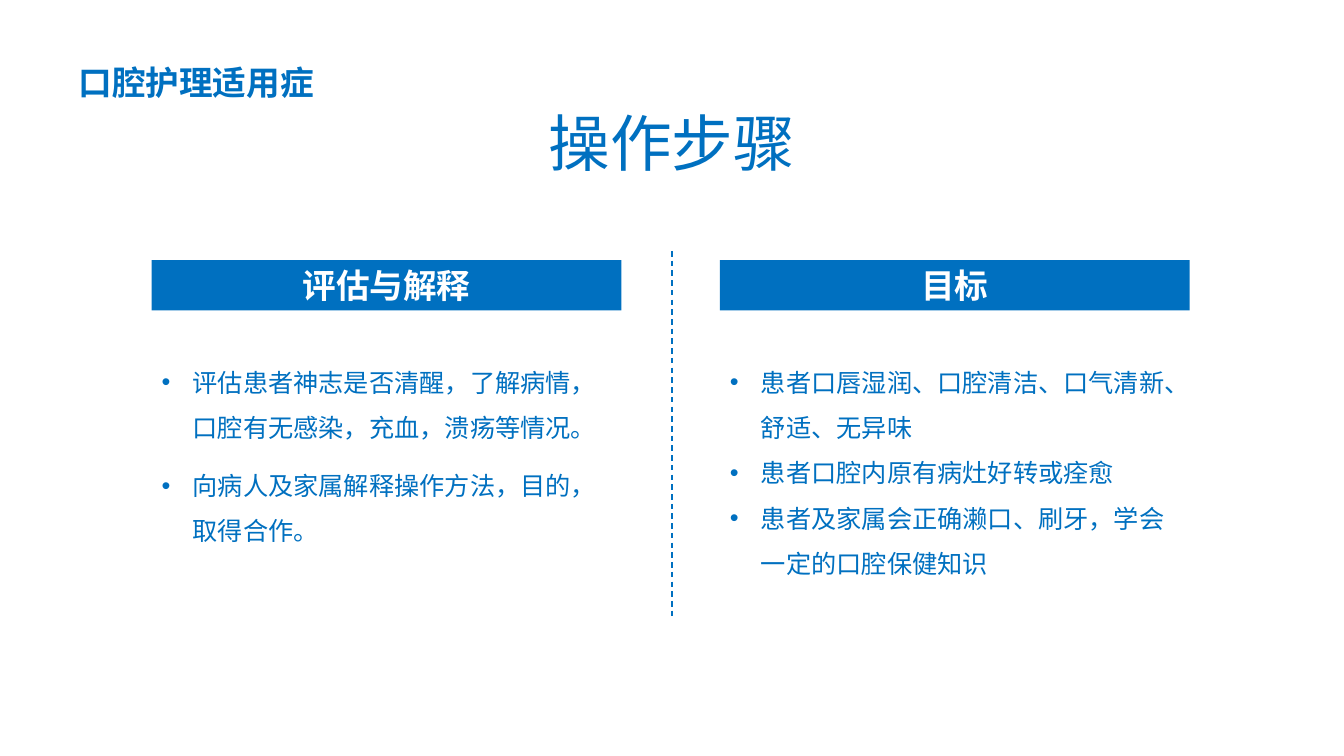
from dataclasses import dataclass

from lxml.etree import SubElement
from pptx import Presentation
from pptx.dml.color import RGBColor
from pptx.enum.dml import MSO_LINE
from pptx.enum.shapes import MSO_CONNECTOR as Connector, MSO_SHAPE as Shape
from pptx.enum.text import MSO_ANCHOR as Anchor, MSO_AUTO_SIZE as AutoSize, PP_ALIGN as Align
from pptx.oxml.ns import qn
from pptx.util import Inches, Pt

BLUE = RGBColor(0x00, 0x70, 0xC0)
WHITE = RGBColor(0xFF, 0xFF, 0xFF)
LATIN_FONT = "Roboto"
CHINESE_FONT = "Noto Sans CJK SC"
SLIDE_WIDTH = Inches(13.33)
SLIDE_HEIGHT = Inches(7.5)
PANEL_WIDTH = 34.95
BAR_TOP, BAR_HEIGHT = 34.4, 6.67
LIST_TOP = 45.87
BULLET_INDENT = Inches(0.31)


@dataclass(frozen=True)
class Panel:
    left: float
    heading: str
    points: tuple[str, ...]
    list_height: float
    point_gap: int


PANELS = (
    Panel(11.28, "评估与解释", (
        "评估患者神志是否清醒，了解病情，口腔有无感染，充血，溃疡等情况。",
        "向病人及家属解释操作方法，目的，取得合作。",
    ), 35.73, 9),
    Panel(53.56, "目标", (
        "患者口唇湿润、口腔清洁、口气清新、舒适、无异味",
        "患者口腔内原有病灶好转或痊愈",
        "患者及家属会正确濑口、刷牙，学会一定的口腔保健知识",
    ), 31.6, 0),
)


def across(percent: float) -> int:
    return round(SLIDE_WIDTH * percent / 100)


def down(percent: float) -> int:
    return round(SLIDE_HEIGHT * percent / 100)


def area(left: float, top: float, width: float, height: float) -> tuple[int, int, int, int]:
    return across(left), down(top), across(width), down(height)


def add_span(para, text: str, size: int, color: RGBColor = BLUE,
             bold: bool = False, latin: str = LATIN_FONT) -> None:
    span = para.add_run()
    span.text = text
    font = span.font
    font.size, font.bold, font.name = Pt(size), bold, latin
    font.color.rgb = color
    SubElement(span._r.get_or_add_rPr(), qn("a:ea"), typeface=CHINESE_FONT)


def add_bullet(para) -> None:
    properties = para._p.get_or_add_pPr()
    properties.set("marL", str(BULLET_INDENT))
    properties.set("indent", str(-BULLET_INDENT))
    SubElement(properties, qn("a:buFont"), typeface="Arial")
    SubElement(properties, qn("a:buChar"), char="•")


def set_title(page, text: str) -> None:
    title = page.shapes.title
    title.left, title.top, title.width, title.height = area(33.76, 10.93, 32.48, 15.6)
    frame = title.text_frame
    frame.word_wrap = False
    frame.auto_size = AutoSize.NONE
    frame.vertical_anchor = Anchor.MIDDLE
    para = frame.paragraphs[0]
    para.alignment = Align.CENTER
    para.line_spacing = 1.0
    para.space_before = Pt(0)
    add_span(para, text, 44)


def add_section_label(page, text: str) -> None:
    box = page.shapes.add_textbox(*area(5.1, 4.93, 19.2, 8.67))
    box.text_frame.word_wrap = False
    para = box.text_frame.paragraphs[0]
    para.line_spacing = 1.5
    add_span(para, text, 24, bold=True, latin=CHINESE_FONT)


def add_heading_bar(page, panel: Panel) -> None:
    bar = page.shapes.add_shape(
        Shape.RECTANGLE, *area(panel.left, BAR_TOP, PANEL_WIDTH, BAR_HEIGHT))
    bar.shadow.inherit = False
    bar.fill.solid()
    bar.fill.fore_color.rgb = BLUE
    bar.line.fill.background()
    bar.text_frame.word_wrap = True
    bar.text_frame.vertical_anchor = Anchor.MIDDLE
    para = bar.text_frame.paragraphs[0]
    para.alignment = Align.CENTER
    add_span(para, panel.heading, 24, WHITE, bold=True)


def add_point_list(page, panel: Panel) -> None:
    box = page.shapes.add_textbox(
        *area(panel.left, LIST_TOP, PANEL_WIDTH, panel.list_height))
    frame = box.text_frame
    frame.word_wrap = True
    for index, point in enumerate(panel.points):
        para = frame.add_paragraph() if index else frame.paragraphs[0]
        add_bullet(para)
        para.line_spacing = 1.5
        para.space_before = Pt(panel.point_gap if index else 0)
        para.font.color.rgb = BLUE
        add_span(para, point, 18)


def add_divider(page) -> None:
    divider = page.shapes.add_connector(
        Connector.STRAIGHT, across(50), down(33.2), across(50), down(81.47))
    divider.line.color.rgb = BLUE
    divider.line.width = Pt(1)
    divider.line.dash_style = MSO_LINE.DASH
    SubElement(divider._element.spPr, qn("a:effectLst"))


def main() -> None:
    deck = Presentation()
    deck.slide_width, deck.slide_height = SLIDE_WIDTH, SLIDE_HEIGHT
    page = deck.slides.add_slide(deck.slide_layouts.get_by_name("Title Only"))
    set_title(page, "操作步骤")
    add_section_label(page, "口腔护理适用症")
    for panel in PANELS:
        add_heading_bar(page, panel)
        add_point_list(page, panel)
    add_divider(page)
    deck.save("out.pptx")


if __name__ == "__main__":
    main()
